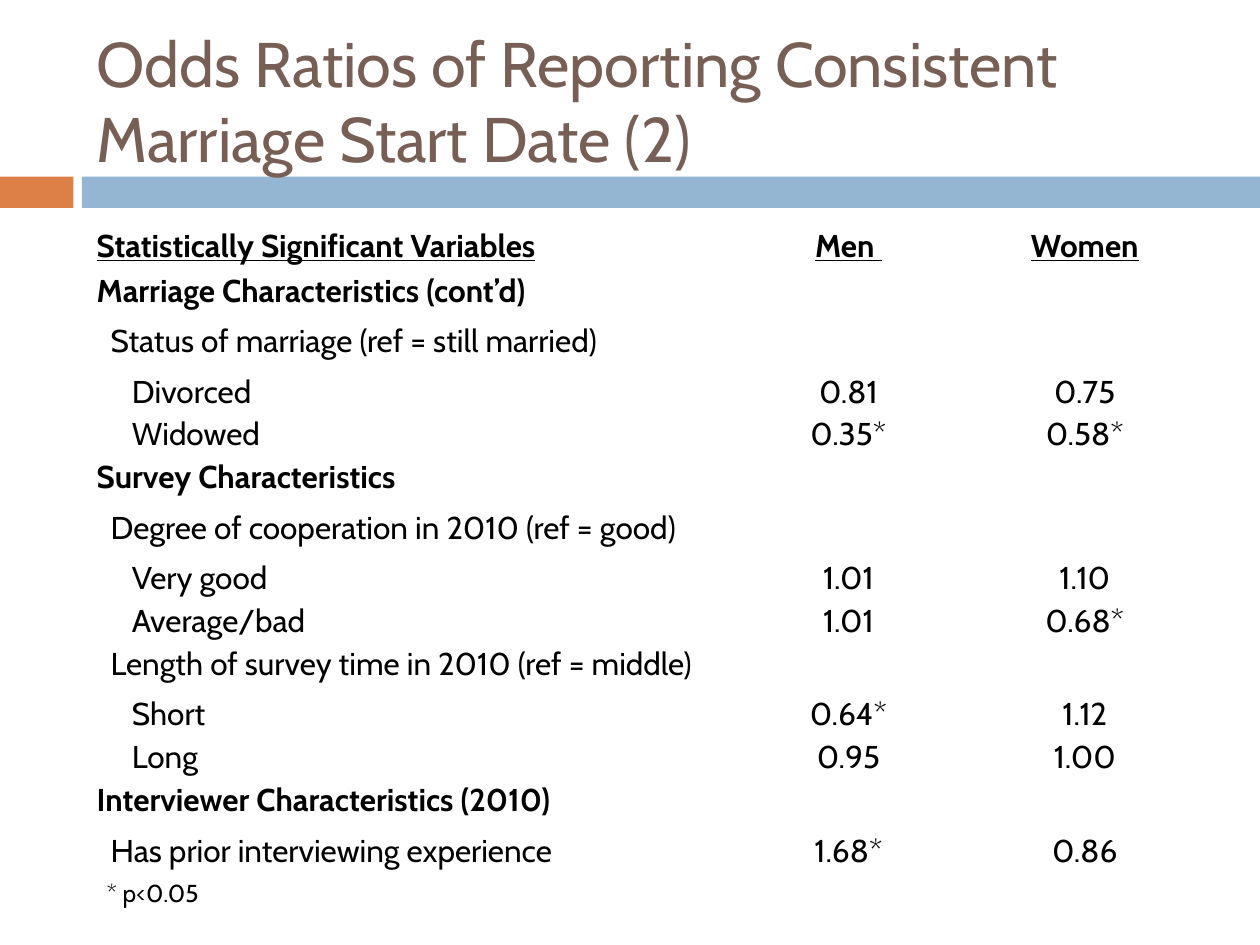
from dataclasses import dataclass

from pptx import Presentation
from pptx.dml.color import RGBColor
from pptx.enum.shapes import MSO_SHAPE as Preset
from pptx.enum.text import MSO_ANCHOR as Anchor, PP_ALIGN as Align
from pptx.util import Cm, Pt


@dataclass(frozen=True)
class Theme:
    """Colours, type sizes and spacing of the deck."""
    font: str = "Cabin"
    heading: str = "775F55"
    body: str = "000000"
    accent: str = "DD8047"
    band: str = "94B6D2"
    title_size: int = 36
    table_size: int = 18
    note_size: int = 14
    row_spacing: float = 0.8
    row_height: float = 0.76
    cell_margin: float = 0.25
    indents: tuple = (0, 0.28, 0.71)


COLUMNS = (13.13, 4.55, 4.98)
HEADER = ("Statistically Significant Variables", "Men ", "Women")
ROWS = (
    (0, "Marriage Characteristics (cont’d)", "", ""),
    (1, "Status of marriage (ref = still married)", "", ""),
    (2, "Divorced", "0.81", "0.75"),
    (2, "Widowed", "0.35*", "0.58*"),
    (0, "Survey Characteristics", "", ""),
    (1, "Degree of cooperation in 2010 (ref = good)", "", ""),
    (2, "Very good", "1.01", "1.10"),
    (2, "Average/bad", "1.01", "0.68*"),
    (1, "Length of survey time in 2010 (ref = middle)", "", ""),
    (2, "Short", "0.64*", "1.12"),
    (2, "Long", "0.95", "1.00"),
    (0, "Interviewer Characteristics (2010)", "", ""),
    (1, "Has prior interviewing experience", "1.68*", "0.86"),
)


class SlideBuilder:
    """Draws themed elements on the current slide."""

    def __init__(self, slide, theme):
        """Keep the slide and its theme."""
        self.slide = slide
        self.theme = theme

    def run(self, paragraph, wording, size, color, bold=False, underline=False):
        """Append one styled run to a paragraph."""
        run = paragraph.add_run()
        run.text = wording
        font = run.font
        font.name, font.size = self.theme.font, Pt(size)
        font.bold, font.underline = bold, underline
        font.color.rgb = RGBColor.from_string(color)

    def bar(self, left, top, width, height, color):
        """Add a plain filled rectangle."""
        bar = self.slide.shapes.add_shape(
            Preset.RECTANGLE, Cm(left), Cm(top), Cm(width), Cm(height))
        bar.shadow.inherit = False
        bar.fill.solid()
        bar.fill.fore_color.rgb = RGBColor.from_string(color)
        bar.line.fill.background()

    def text(self, left, top, width, height, wording, size, color,
             wrap=True, anchor=Anchor.TOP):
        """Add a text box with a single run."""
        frame = self.slide.shapes.add_textbox(
            Cm(left), Cm(top), Cm(width), Cm(height)).text_frame
        frame.word_wrap, frame.vertical_anchor = wrap, anchor
        self.run(frame.paragraphs[0], wording, size, color)

    def cell(self, cell, wording, centred, level=0, spacing=None, **style):
        """Fill one table cell, indenting it by its level."""
        cell.fill.background()
        if not wording:
            return
        cell.margin_left = Cm(self.theme.cell_margin + self.theme.indents[level])
        paragraph = cell.text_frame.paragraphs[0]
        paragraph.alignment = Align.CENTER if centred else Align.LEFT
        paragraph.line_spacing = spacing
        self.run(paragraph, wording, self.theme.table_size, self.theme.body, **style)

    def table(self, left, top, widths, header, rows):
        """Add the odds ratio table with grouped, indented rows."""
        theme = self.theme
        count = len(rows) + 1
        table = self.slide.shapes.add_table(
            count, len(widths), Cm(left), Cm(top),
            Cm(sum(widths)), Cm(count * theme.row_height)).table
        table.first_row = table.horz_banding = False
        for column, width in zip(table.columns, widths):
            column.width = Cm(width)
        for index, label in enumerate(header):
            self.cell(table.cell(0, index), label, index > 0, bold=True, underline=True)
        for line, (level, *entries) in enumerate(rows, start=1):
            for index, entry in enumerate(entries):
                self.cell(table.cell(line, index), entry, index > 0,
                          level=0 if index else level,
                          spacing=theme.row_spacing, bold=level == 0)


def main():
    """Build and save the slide."""
    deck = Presentation()
    deck.slide_width, deck.slide_height = Cm(25.4), Cm(19.05)
    theme = Theme()
    page = SlideBuilder(deck.slides.add_slide(deck.slide_layouts[6]), theme)
    page.bar(0, 3.56, 1.48, 0.63, theme.accent)
    page.bar(1.65, 3.56, 23.75, 0.63, theme.band)
    page.text(1.7, 0.64, 22.66, 2.74,
              "Odds Ratios of Reporting Consistent Marriage Start Date (2)",
              theme.title_size, theme.heading, anchor=Anchor.MIDDLE)
    page.table(1.7, 4.45, COLUMNS, HEADER, ROWS)
    page.text(1.9, 17.58, 2.41, 0.86, "* p<0.05",
              theme.note_size, theme.body, wrap=False)
    deck.save("out.pptx")


if __name__ == "__main__":
    main()
